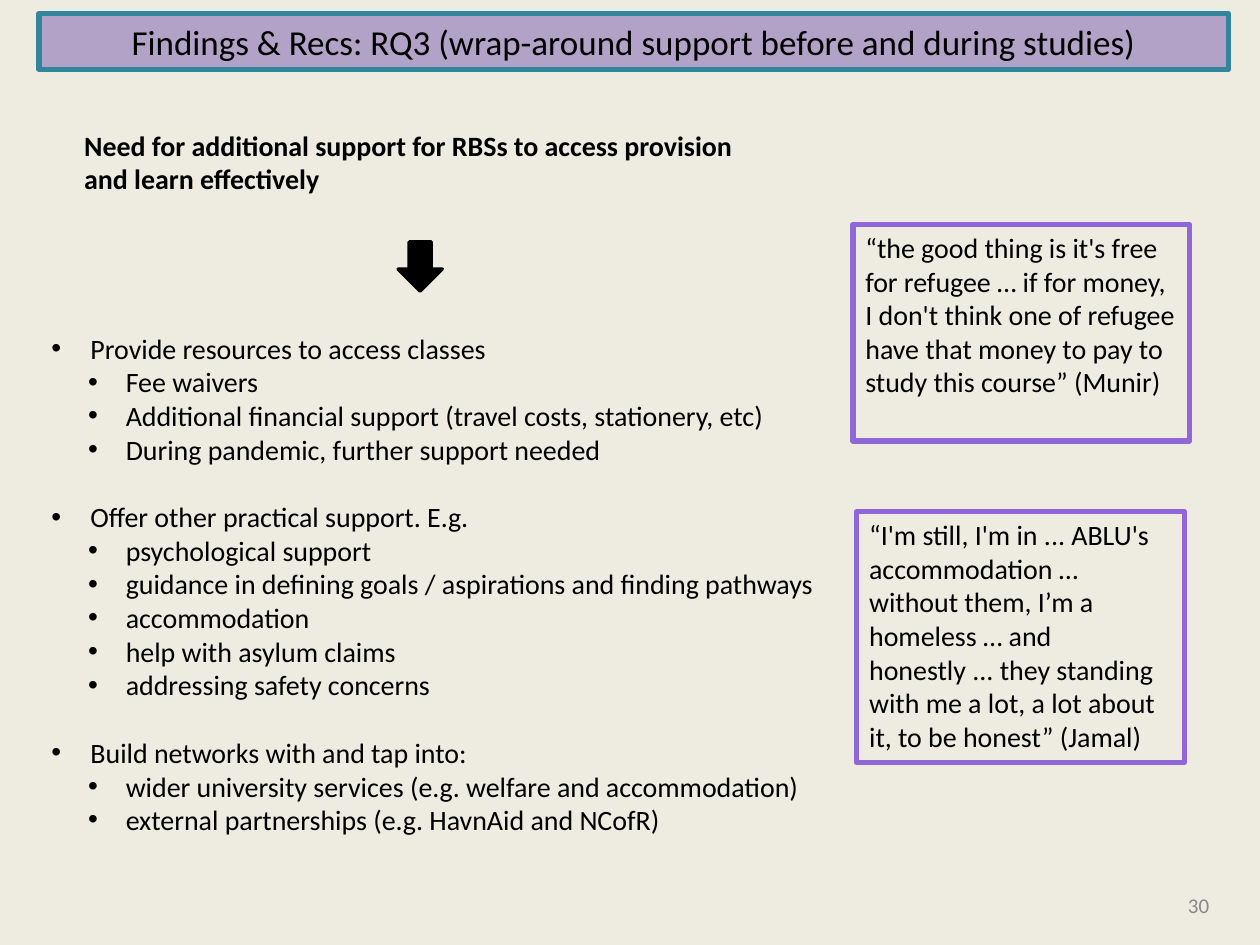
"""Build a findings slide on wrap-around support with quotations."""
from typing import NamedTuple, Optional

from lxml import etree
from pptx import Presentation
from pptx.dml.color import RGBColor
from pptx.enum.shapes import MSO_SHAPE
from pptx.enum.text import MSO_ANCHOR, PP_ALIGN
from pptx.oxml.ns import qn
from pptx.util import Inches, Pt

RECTANGLE = MSO_SHAPE.RECTANGLE
DOWN_ARROW = MSO_SHAPE.DOWN_ARROW
TOP, MIDDLE = MSO_ANCHOR.TOP, MSO_ANCHOR.MIDDLE
LEFT, CENTER = PP_ALIGN.LEFT, PP_ALIGN.CENTER

SLIDE_WIDTH, SLIDE_HEIGHT = Inches(10), Inches(7.5)
GRID_COLUMNS, GRID_ROWS = 100, 75
FONT = "Calibri"
BODY_SIZE = 16
GROUP_GAP = 19.5
BACKGROUND, BLACK, GREY = "EEECE1", "000000", "888888"
LILAC, TEAL, PURPLE = "B3A2C7", "31859C", "8F67D7"


class Area(NamedTuple):
    """A region in grid columns and rows."""

    column: float
    row: float
    columns: float
    rows: float

    def lengths(self) -> tuple[int, int, int, int]:
        """Return left, top, width and height in slide units."""
        cell_width = SLIDE_WIDTH / GRID_COLUMNS
        cell_height = SLIDE_HEIGHT / GRID_ROWS
        return (
            round(self.column * cell_width),
            round(self.row * cell_height),
            round(self.columns * cell_width),
            round(self.rows * cell_height),
        )


class TextStyle(NamedTuple):
    """The look of a block of text."""

    size: float = BODY_SIZE
    color: str = BLACK
    bold: bool = False
    alignment: PP_ALIGN = LEFT
    anchor: MSO_ANCHOR = TOP


class BulletLevel(NamedTuple):
    """The indents of a bullet level, in inches."""

    margin: float
    hanging: float


class Recommendation(NamedTuple):
    """A recommendation and its details."""

    title: str
    details: tuple[str, ...]


class Quotation(NamedTuple):
    """A framed quotation."""

    area: Area
    text: str


TITLE_AREA = Area(3.1, 1.1, 94.4, 4.4)
NEED_AREA = Area(5.7, 9.7, 55.2, 9.1)
ARROW_AREA = Area(31.6, 19.2, 3.5, 3.9)
RECOMMENDATIONS_AREA = Area(3.1, 20, 62.8, 49.8)
NUMBER_AREA = Area(93.3, 69.8, 6, 4)
RECOMMENDATIONS_INSET = Inches(0.63)
MAIN_LEVEL = BulletLevel(0.31, 0.31)
DETAIL_LEVEL = BulletLevel(0.59, 0.3)

RECOMMENDATIONS = (
    Recommendation("Provide resources to access classes", (
        "Fee waivers",
        "Additional financial support (travel costs, stationery, etc)",
        "During pandemic, further support needed",
    )),
    Recommendation("Offer other practical support. E.g.", (
        "psychological support",
        "guidance in defining goals / aspirations and finding pathways",
        "accommodation",
        "help with asylum claims",
        "addressing safety concerns",
    )),
    Recommendation("Build networks with and tap into:", (
        "wider university services (e.g. welfare and accommodation)",
        "external partnerships (e.g. HavnAid and NCofR)",
    )),
)

QUOTATIONS = (
    Quotation(
        Area(67.7, 17.8, 26.7, 17.2),
        "“the good thing is it's free for refugee … if for money, I don't think "
        "one of refugee have that money to pay to study this course” (Munir)",
    ),
    Quotation(
        Area(68, 40.6, 26, 19.9),
        "“I'm still, I'm in ... ABLU's accommodation … without them, I’m a "
        "homeless … and honestly ... they standing with me a lot, a lot about "
        "it, to be honest” (Jamal)",
    ),
)


def color_of(value: str) -> RGBColor:
    """Turn a hex string into a colour."""
    return RGBColor.from_string(value)


def format_paragraph(paragraph, style: TextStyle) -> None:
    """Apply a text style to a paragraph and its runs."""
    paragraph.alignment = style.alignment
    for run in paragraph.runs:
        run.font.name = FONT
        run.font.size = Pt(style.size)
        run.font.bold = style.bold
        run.font.color.rgb = color_of(style.color)


def write_text(shape, text: str, style: TextStyle) -> None:
    """Put one styled paragraph in a shape."""
    frame = shape.text_frame
    frame.word_wrap = True
    frame.vertical_anchor = style.anchor
    frame.text = text
    format_paragraph(frame.paragraphs[0], style)


def add_text(slide, area: Area, text: str, style: TextStyle) -> None:
    """Add a text box with one styled paragraph."""
    write_text(slide.shapes.add_textbox(*area.lengths()), text, style)


def add_outlined_shape(slide, kind: MSO_SHAPE, area: Area, line: str,
                       width: float, fill: Optional[str] = None):
    """Add a shape with an outline and an optional fill."""
    shape = slide.shapes.add_shape(kind, *area.lengths())
    shape.shadow.inherit = False
    if fill is None:
        shape.fill.background()
    else:
        shape.fill.solid()
        shape.fill.fore_color.rgb = color_of(fill)
    shape.line.color.rgb = color_of(line)
    shape.line.width = Pt(width)
    return shape


def add_bullet(paragraph, text: str, level: BulletLevel) -> None:
    """Write a bulleted line at the given level."""
    paragraph.text = text
    format_paragraph(paragraph, TextStyle())
    properties = paragraph._p.get_or_add_pPr()
    properties.set("marL", str(Inches(level.margin)))
    properties.set("indent", str(-Inches(level.hanging)))
    etree.SubElement(properties, qn("a:buFont")).set("typeface", "Arial")
    etree.SubElement(properties, qn("a:buChar")).set("char", "•")


def add_recommendations(slide) -> None:
    """Add the bulleted recommendations with a gap between groups."""
    frame = slide.shapes.add_textbox(*RECOMMENDATIONS_AREA.lengths()).text_frame
    frame.word_wrap = True
    frame.margin_top = RECOMMENDATIONS_INSET
    for index, recommendation in enumerate(RECOMMENDATIONS):
        paragraph = frame.add_paragraph() if index else frame.paragraphs[0]
        if index:
            paragraph.space_before = Pt(GROUP_GAP)
        add_bullet(paragraph, recommendation.title, MAIN_LEVEL)
        for detail in recommendation.details:
            add_bullet(frame.add_paragraph(), detail, DETAIL_LEVEL)


def main() -> None:
    """Build and save the slide."""
    presentation = Presentation()
    presentation.slide_width, presentation.slide_height = SLIDE_WIDTH, SLIDE_HEIGHT
    slide = presentation.slides.add_slide(presentation.slide_layouts[6])
    slide.background.fill.solid()
    slide.background.fill.fore_color.rgb = color_of(BACKGROUND)
    title = add_outlined_shape(slide, RECTANGLE, TITLE_AREA, TEAL, 3, LILAC)
    write_text(title, "Findings & Recs: RQ3 (wrap-around support before and during studies)",
               TextStyle(size=20, alignment=CENTER, anchor=MIDDLE))
    add_text(slide, NEED_AREA, "Need for additional support for RBSs to access provision "
             "and learn effectively", TextStyle(bold=True))
    add_outlined_shape(slide, DOWN_ARROW, ARROW_AREA, BLACK, 2, BLACK)
    for quotation in QUOTATIONS:
        frame = add_outlined_shape(slide, RECTANGLE, quotation.area, PURPLE, 3)
        write_text(frame, quotation.text, TextStyle())
    add_recommendations(slide)
    add_text(slide, NUMBER_AREA, "30", TextStyle(size=12, color=GREY, anchor=MIDDLE))
    presentation.save("out.pptx")


if __name__ == "__main__":
    main()
